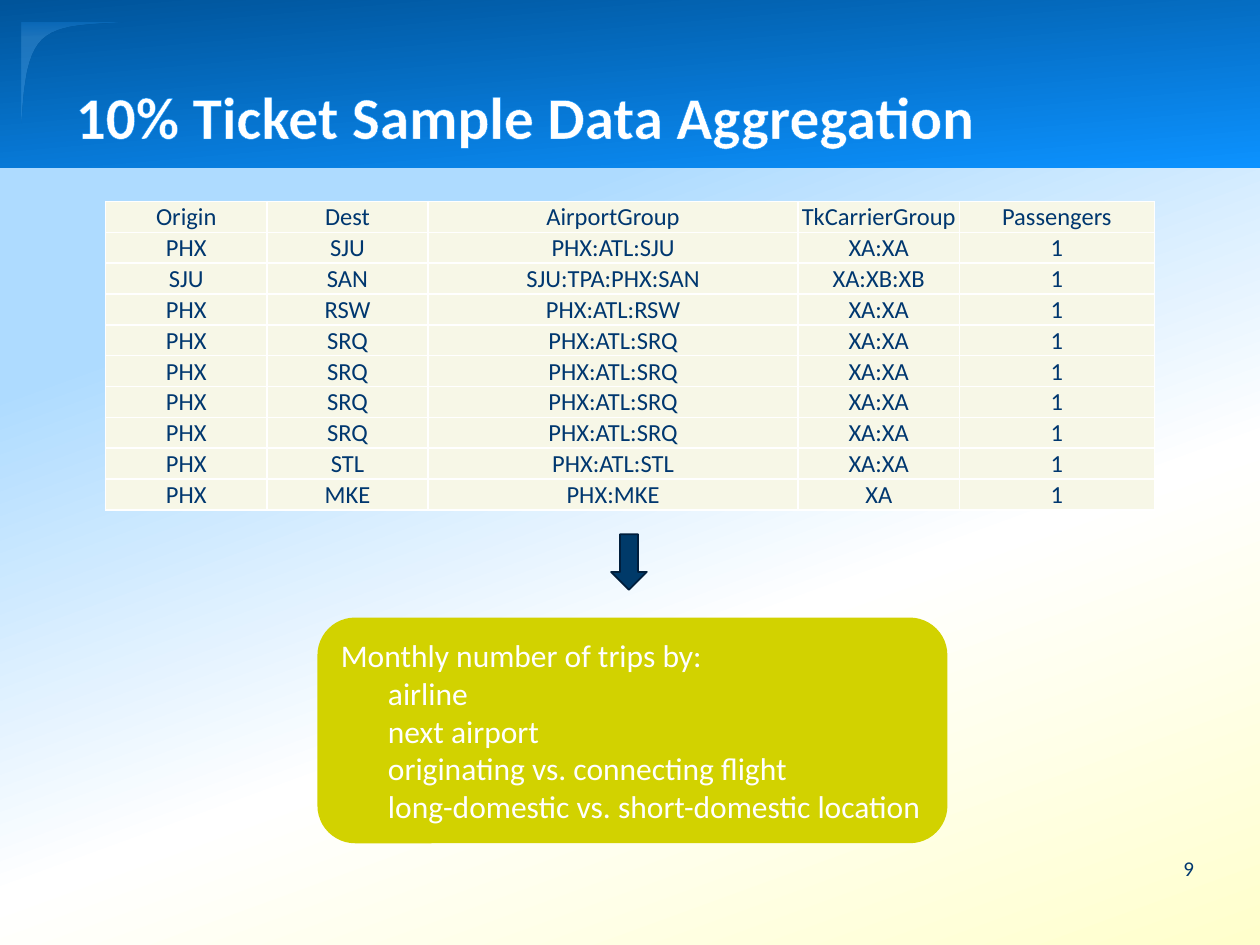
from lxml.etree import SubElement
from pptx import Presentation
from pptx.dml.color import RGBColor
from pptx.enum.shapes import MSO_SHAPE as Preset
from pptx.enum.text import MSO_ANCHOR as Anchor, MSO_AUTO_SIZE as AutoSize, PP_ALIGN as Align
from pptx.oxml import parse_xml
from pptx.oxml.ns import nsdecls, qn
from pptx.util import Cm, Pt

TITLE = "10% Ticket Sample Data Aggregation"
PAGE_NUMBER = "9"
HEADER = ("Origin", "Dest", "AirportGroup", "TkCarrierGroup", "Passengers")
TRIPS = [
    ("PHX", "SJU", "PHX:ATL:SJU", "XA:XA", "1"),
    ("SJU", "SAN", "SJU:TPA:PHX:SAN", "XA:XB:XB", "1"),
    ("PHX", "RSW", "PHX:ATL:RSW", "XA:XA", "1"),
    *[("PHX", "SRQ", "PHX:ATL:SRQ", "XA:XA", "1")] * 4,
    ("PHX", "STL", "PHX:ATL:STL", "XA:XA", "1"),
    ("PHX", "MKE", "PHX:MKE", "XA", "1"),
]
SUMMARY = "Monthly number of trips by:"
GROUPINGS = [
    "airline",
    "next airport",
    "originating vs. connecting flight",
    "long-domestic vs. short-domestic location",
]
COLUMN_WIDTHS = (3.25, 3.25, 7.46, 3.25, 3.93)
ROW_HEIGHT = 0.62
COLORS = {
    "text": "00376F", "white": "FFFFFF", "cell": "F7F7E7", "callout": "D2D200",
    "arrow": "003A69", "arrow line": "001E3C", "title line": "0C92FF",
}
SKY = [(28, "AEDBFF", 100), (64, "FFFFFF", 100), (100, "FFFFCC", 100)]
BAND = [(0, "00549A", 100), (100, "0C92FF", 100)]
GLINT = [(0, "299EFF", 22), (15, "7DC4FF", 23)]
GLINT_CORNER = (0.43, 0.46)
GLINT_CURVES = [
    [(0.43, 2.49), (0.48, 1.83), (0.51, 1.14), (0.84, 0.81)],
    [(0.84, 0.81), (1.19, 0.48), (1.78, 0.51), (2.49, 0.46)],
]


def color(name):
    """Return the named palette colour."""
    return RGBColor.from_string(COLORS[name])


def write(frame, lines, size=18, ink="white", bold=False, align=Align.LEFT, anchor=Anchor.MIDDLE):
    """Fill a text frame with formatted paragraphs and return them."""
    frame.vertical_anchor = anchor
    frame.text = "\n".join(lines)
    for para in frame.paragraphs:
        para.alignment = align
        for span in para.runs:
            span.font.name, span.font.size, span.font.bold = "Calibri", Pt(size), bold
            span.font.color.rgb = color(ink)
    return frame.paragraphs


def solid_line(parent, tag, ink, points):
    """Put a solid line element first in its parent."""
    line = SubElement(parent, qn(tag), w=str(Pt(points)))
    SubElement(SubElement(line, qn("a:solidFill")), qn("a:srgbClr"), val=COLORS[ink])
    parent.insert(0, line)


def set_gradient(fill, owner, stops, angle):
    """Give a fill a linear gradient with opacity in percent."""
    fill.solid()
    fill.fore_color.rgb = color("white")
    marks = "".join(
        f'<a:gs pos="{place * 1000}"><a:srgbClr val="{ink}"><a:alpha val="{opacity * 1000}"/></a:srgbClr></a:gs>'
        for place, ink, opacity in stops)
    solid = owner.xpath(".//a:solidFill")[0]
    solid.getparent().replace(solid, parse_xml(
        f'<a:gradFill {nsdecls("a")} rotWithShape="1"><a:gsLst>{marks}</a:gsLst>'
        f'<a:lin ang="{angle * 60000}" scaled="0"/></a:gradFill>'))


def add_shape(page, preset, left, top, width, height, ink):
    """Add a plain shape without shadow or line."""
    shape = page.shapes.add_shape(preset, Cm(left), Cm(top), Cm(width), Cm(height))
    shape.shadow.inherit = False
    shape.fill.solid()
    shape.fill.fore_color.rgb = color(ink)
    shape.line.fill.background()
    return shape


def curve_points(curve, steps=12):
    """Return points along a cubic curve."""
    weights = [((1 - t) ** 3, 3 * t * (1 - t) ** 2, 3 * t * t * (1 - t), t ** 3)
               for t in (step / steps for step in range(1, steps + 1))]
    return [tuple(Cm(sum(w * point[axis] for w, point in zip(row, curve))) for axis in (0, 1))
            for row in weights]


def add_header(page):
    """Add the title on its gradient band with the corner glint."""
    title = page.shapes.title
    title.left, title.top, title.width, title.height = Cm(1.27), Cm(0.43), Cm(22.86), Cm(2.74)
    para = write(title.text_frame, [TITLE], size=34, bold=True, anchor=Anchor.BOTTOM)[0]
    title.text_frame.auto_size = AutoSize.NONE
    solid_line(para.runs[0].font._element, "a:ln", "title line", 0.75)

    band = add_shape(page, Preset.RECTANGLE, 0, 0, 25.4, 3.38, "white")
    set_gradient(band.fill, band.element.spPr, BAND, 85)

    builder = page.shapes.build_freeform(*map(Cm, GLINT_CORNER), scale=1.0)
    outline = [tuple(map(Cm, GLINT_CURVES[0][0]))]
    for curve in GLINT_CURVES:
        outline += curve_points(curve)
    builder.add_line_segments(outline, close=True)
    glint = builder.convert_to_shape()
    glint.shadow.inherit = False
    glint.line.fill.background()
    set_gradient(glint.fill, glint.element.spPr, GLINT, 90)
    for shape in (band, glint):
        title.element.addprevious(shape.element)


def add_trip_table(page):
    """Add the table of sample trips."""
    rows = [HEADER, *TRIPS]
    table = page.shapes.add_table(
        len(rows), len(HEADER), Cm(2.13), Cm(4.06),
        Cm(sum(COLUMN_WIDTHS)), Cm(ROW_HEIGHT * len(rows))).table
    table.first_row = table.horz_banding = False
    for column, width in zip(table.columns, COLUMN_WIDTHS):
        column.width = Cm(width)
    for row, values in zip(table.rows, rows):
        row.height = Cm(ROW_HEIGHT)
        for cell, value in zip(row.cells, values):
            write(cell.text_frame, [value], size=14, ink="text", align=Align.CENTER)
            cell.vertical_anchor = Anchor.BOTTOM
            cell.margin_left = cell.margin_right = cell.margin_top = Cm(0.02)
            cell.margin_bottom = 0
            cell.fill.solid()
            cell.fill.fore_color.rgb = color("cell")
            for side in ("a:lnB", "a:lnT", "a:lnR", "a:lnL"):
                solid_line(cell._tc.tcPr, side, "white", 1)


def add_summary(page):
    """Add the callout, the arrow leading to it and the page number."""
    callout = add_shape(page, Preset.ROUNDED_RECTANGLE, 6.4, 12.45, 12.7, 4.55, "callout")
    callout.text_frame.word_wrap = True
    for para in write(callout.text_frame, [SUMMARY, *GROUPINGS])[1:]:
        para._p.get_or_add_pPr().set("marL", str(Cm(0.95)))

    arrow = add_shape(page, Preset.DOWN_ARROW, 12.32, 10.77, 0.72, 1.12, "arrow")
    arrow.line.color.rgb = color("arrow line")
    arrow.line.width = Pt(1)

    number = page.shapes.add_textbox(Cm(23.29), Cm(16.99), Cm(1.35), Cm(1.02))
    number.text_frame.word_wrap = True
    write(number.text_frame, [PAGE_NUMBER], size=12, ink="text", align=Align.CENTER)


def main():
    """Build and save the slide."""
    deck = Presentation()
    deck.slide_width, deck.slide_height = Cm(25.4), Cm(19.05)
    page = deck.slides.add_slide(deck.slide_layouts[5])
    set_gradient(page.background.fill, page.element.xpath(".//p:bg")[0], SKY, 70)
    add_header(page)
    add_trip_table(page)
    add_summary(page)
    deck.save("out.pptx")


if __name__ == "__main__":
    main()
